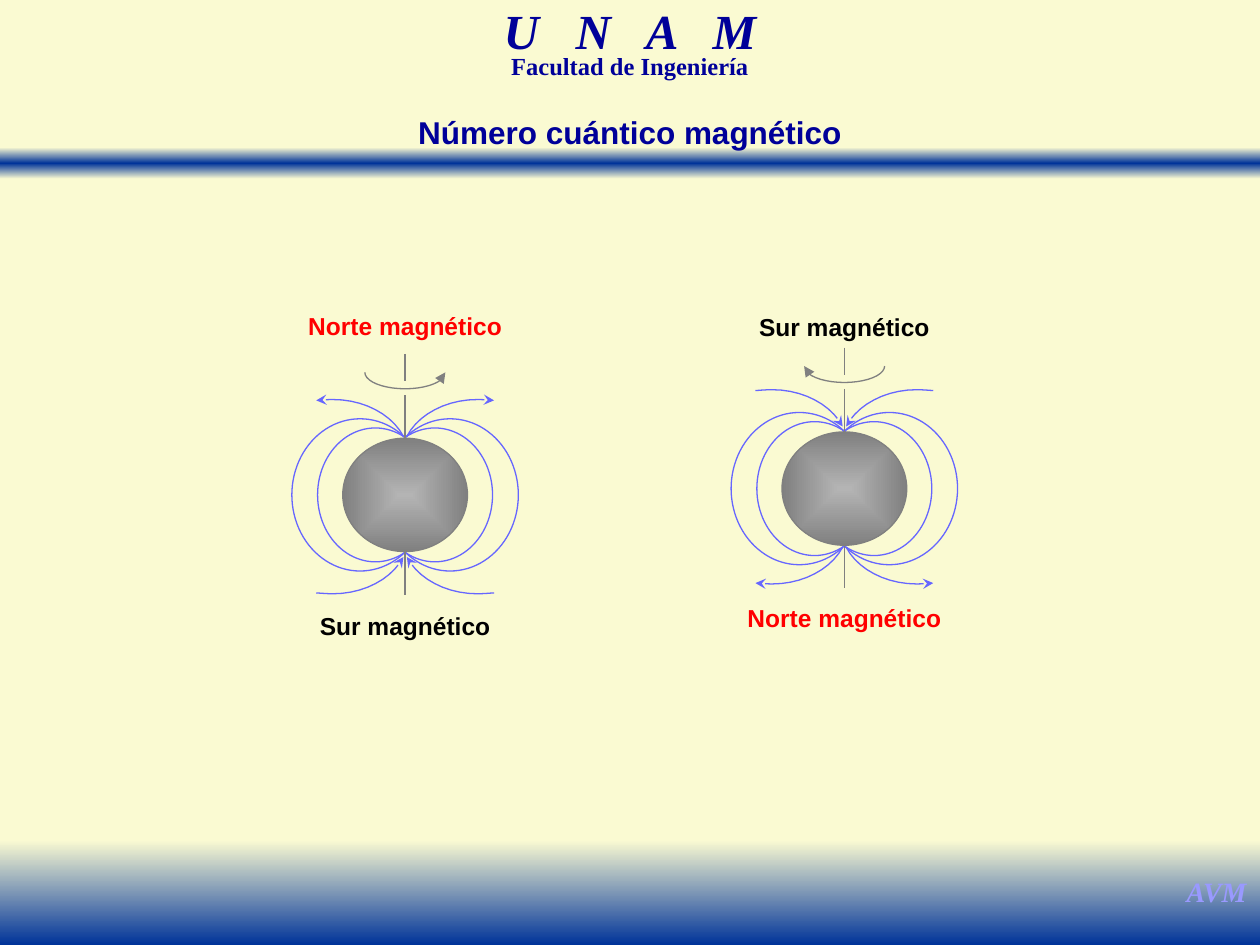
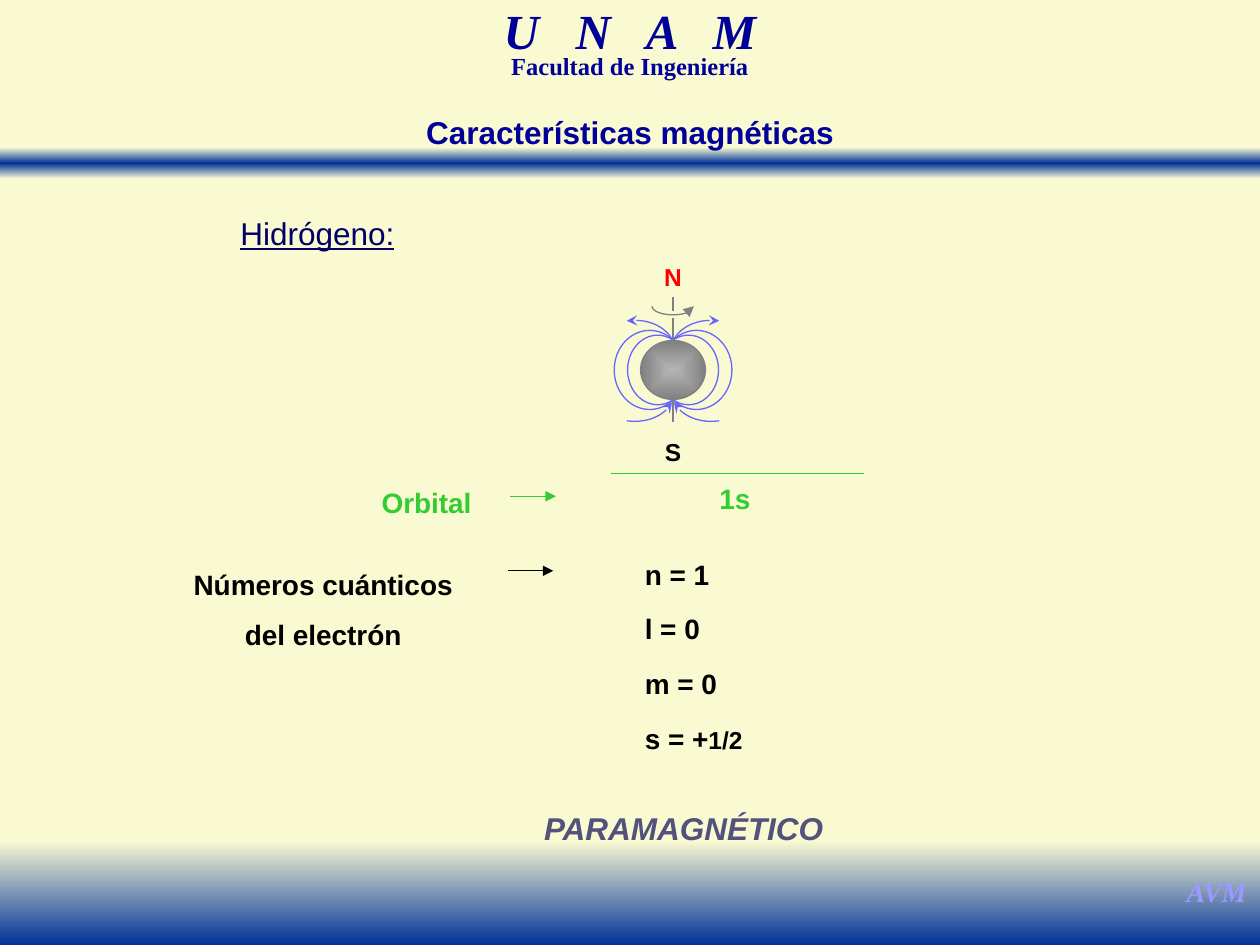
from math import cos, pi, sin

from lxml.etree import SubElement
from pptx import Presentation
from pptx.dml.color import RGBColor
from pptx.enum.shapes import MSO_CONNECTOR, MSO_SHAPE
from pptx.enum.text import PP_ALIGN
from pptx.oxml import parse_xml
from pptx.oxml.ns import nsdecls, qn
from pptx.util import Pt

HUES = {
    "cream": "FAFAD2", "band": "003399", "title": "000099", "sign": "9999FF",
    "field": "6666FF", "axis": "808080", "shine": "B4B4B4", "north": "FF0000",
    "black": "000000", "green": "33CC33", "navy": "000066", "slate": "52527C",
}
WIDE, HIGH = 720, 540
SERIF = {"name": "Times New Roman", "bold": True}
BOLD = {"name": "Arial", "bold": True}
# One field line that leaves the pole: two joined cubic curves, as distances
# outward from the axis and away from the sphere's centre.
FIELD = [(1, 33.5), (7.6, 46), (23.4, 54.5), (41.4, 54.5),
         (44.3, 54.5), (47.9, 54.2), (50.8, 54)]


def rgb(hue):
    return RGBColor.from_string(HUES[hue])


def points(*vals):
    return [Pt(round(v, 2)) for v in vals]


def text(shapes, box, runs, size, hue, font, align=PP_ALIGN.LEFT, space=1,
         wrap=True):
    """Add a text box; each run is its words and the format it adds."""
    shape = shapes.add_textbox(*points(*box))
    shape.text_frame.word_wrap = wrap
    para = shape.text_frame.paragraphs[0]
    para.alignment, para.line_spacing = align, space
    if isinstance(runs, str):
        runs = [(runs, {})]
    for words, extra in runs:
        run = para.add_run()
        run.text = words
        for key, val in {"size": Pt(size), **font, **extra}.items():
            setattr(run.font, key, val)
        run.font.color.rgb = rgb(hue)
    return para


def shade(shape, stops, way):
    """Fill with gradient stops; way is the XML that sets the direction."""
    marks = "".join(f'<a:gs pos="{at * 1000}"><a:srgbClr val="{HUES[hue]}"/></a:gs>'
                    for at, hue in stops)
    shape.fill.background()
    props = shape._element.spPr
    props.replace(props.find(qn("a:noFill")), parse_xml(
        f'<a:gradFill {nsdecls("a")} rotWithShape="1">'
        f"<a:gsLst>{marks}</a:gsLst>{way}</a:gradFill>"))


def stroke(shape, hue, head=None, tail=None):
    """Draw a thin line with the given arrowheads at its start and end."""
    shape.line.color.rgb = rgb(hue)
    shape.line.width = Pt(0.75)
    edge = shape._element.spPr.find(qn("a:ln"))
    for tag, kind in (("a:headEnd", head), ("a:tailEnd", tail)):
        if kind:
            SubElement(edge, qn(tag)).set("type", kind)


def line(shapes, start, end, hue, **ends):
    link = shapes.add_connector(MSO_CONNECTOR.STRAIGHT, *points(*start, *end))
    stroke(link, hue, **ends)
    SubElement(link._element.spPr, qn("a:effectLst"))


def curve(shapes, dots, hue, **ends):
    dots = [points(*dot) for dot in dots]
    pen = shapes.build_freeform(*dots[0])
    pen.add_line_segments(dots[1:], close=False)
    shape = pen.convert_to_shape()
    shape.fill.background()
    shape.shadow.inherit = False
    stroke(shape, hue, **ends)


def oval(shapes, x, y, w, h, hue):
    """Add an unfilled ellipse centred on x, y."""
    shape = shapes.add_shape(MSO_SHAPE.OVAL,
                             *points(x - w / 2, y - h / 2, w, h))
    shape.fill.background()
    shape.shadow.inherit = False
    stroke(shape, hue)
    return shape


def bezier(knots, steps=10):
    """Sample a chain of cubic curves."""
    dots = [knots[0]]
    for at in range(0, len(knots) - 1, 3):
        a, b, c, d = knots[at:at + 4]
        for step in range(1, steps + 1):
            t = step / steps
            u = 1 - t
            dots.append([u**3 * p + 3 * u * u * t * q + 3 * u * t * t * r + t**3 * s
                         for p, q, r, s in zip(a, b, c, d)])
    return dots


def band(shapes, y, h, stops):
    shape = shapes.add_shape(MSO_SHAPE.RECTANGLE, *points(0, y, WIDE, h))
    shade(shape, stops, '<a:lin ang="5400000" scaled="1"/>')
    shape.line.fill.background()
    shape.shadow.inherit = False


def frame(deck, title):
    """Start a slide with the shared bands, heading and title."""
    slide = deck.slides.add_slide(deck.slide_layouts[6])
    slide.background.fill.solid()
    slide.background.fill.fore_color.rgb = rgb("cream")
    shapes = slide.shapes
    band(shapes, 84.24, 18, [(0, "cream"), (50, "band"), (100, "cream")])
    band(shapes, 480.24, 59.76, [(0, "cream"), (100, "band")])
    mid = PP_ALIGN.CENTER
    name = text(shapes, (219, 5.76, 282, 31), [("U N A ", {}), ("M", {})],
                28, "title", {**SERIF, "italic": True}, mid, 0.7)
    name.runs[0]._r.get_or_add_rPr().set("spc", "700")
    text(shapes, (231, 30.24, 258, 18.7), "Facultad de Ingeniería", 14,
         "title", SERIF, mid, 0.7)
    text(shapes, (670.3, 496, 49.7, 26.6), "AVM", 16, "sign",
         {**SERIF, "italic": True}, mid, wrap=False)
    text(shapes, (204, 67, 312, 23), title, 18, "title", BOLD, mid, 0.7)
    return shapes


def magnet(shapes, x, y, zoom, north, south, tops, up=True):
    """Draw a spinning sphere centred on x, y with its field and pole names."""
    group = shapes.add_group_shape().shapes

    def place(dx, dy):
        return x + dx * zoom, y + dy * zoom

    for gap, w, h in ((25.7, 78, 87), (17, 66, 76.5)):
        for side in (1, -1):
            oval(group, *place(side * gap, 0), w * zoom, h * zoom, "field")
    ball = oval(group, x, y, 71.3 * zoom, 64.8 * zoom, "axis")
    shade(ball, [(0, "shine"), (100, "axis")],
          '<a:path path="shape">'
          '<a:fillToRect l="50000" t="50000" r="50000" b="50000"/></a:path>')
    for top, end in ((-80.6, -65), (-57, -32.4), (32.4, 57)):
        line(group, place(0, top), place(0, end), "axis")

    spin = 1 if up else -1
    arc = [place(spin * 23 * cos(pi * n / 20), -70 + 9.4 * sin(pi * n / 20))
           for n in range(21)]
    curve(group, arc, "axis", head="triangle")
    for side in (1, -1):
        for pole, lift, ends in ((-spin, 0, {"tail": "stealth"}),
                                 (spin, 2, {"head": "stealth"})):
            knots = [place(side * dx, pole * (dy + lift)) for dx, dy in FIELD]
            curve(group, bezier(knots), "field", **ends)

    names = [(north, "north"), (south, "black")]
    for (words, hue), top in zip(names if up else names[::-1], tops):
        text(group, (x - 63, y + top, 126, 23.8), words, 14, hue, BOLD,
             PP_ALIGN.CENTER)


def orbital(shapes, x, y):
    """Name the orbital, with an arrow to its value under a rule."""
    for dx, dy, w, words in ((0, 2.2, 72, "Orbital"), (193, 0, 36, "1s")):
        text(shapes, (x + dx, y + dy, w, 36.7), words, 16, "green", BOLD,
             space=1.5)
    line(shapes, (x + 80.6, y + 21.6), (x + 106.6, y + 21.6), "green",
         tail="triangle")
    line(shapes, (x + 138.2, y + 8.6), (x + 283, y + 8.6), "green")


def numbers(shapes, x, y):
    """List the quantum numbers beside their caption."""
    text(shapes, (x, y + 5.8, 175, 65.5), "Números cuánticos del electrón", 16,
         "black", BOLD, PP_ALIGN.CENTER, 1.5)
    line(shapes, (x + 193, y + 20.9), (x + 219, y + 20.9), "black",
         tail="triangle")
    rows = ["n = 1", "l = 0", "m = 0",
            [("s = +", {}), ("1/2", {"size": Pt(14)})]]
    for row, words in enumerate(rows):
        text(shapes, (x + 264.2, y + row * 31.3, 80, 36), words, 16, "black",
             BOLD, space=1.5)


def main():
    deck = Presentation()
    deck.slide_width, deck.slide_height = Pt(WIDE), Pt(HIGH)

    shapes = frame(deck, "Número cuántico magnético")
    poles = ("Norte magnético", "Sur magnético")
    magnet(shapes, 231.5, 282.8, 1, *poles, (-108.6, 62.8))
    magnet(shapes, 482.5, 279.2, 1, *poles, (-104.2, 62), up=False)

    shapes = frame(deck, "Características magnéticas")
    text(shapes, (130.3, 108, 120, 39.6), "Hidrógeno:", 18, "navy",
         {"name": "Arial", "underline": True}, space=1.5)
    magnet(shapes, 384.6, 211.4, 0.52, "N", "S", (-65.2, 34.8))
    orbital(shapes, 211, 262)
    numbers(shapes, 97.2, 305.3)
    text(shapes, (303.8, 447.8, 190, 39.6), "PARAMAGNÉTICO", 18, "slate",
         {**BOLD, "italic": True}, space=1.5)

    deck.save("out.pptx")


if __name__ == "__main__":
    main()
